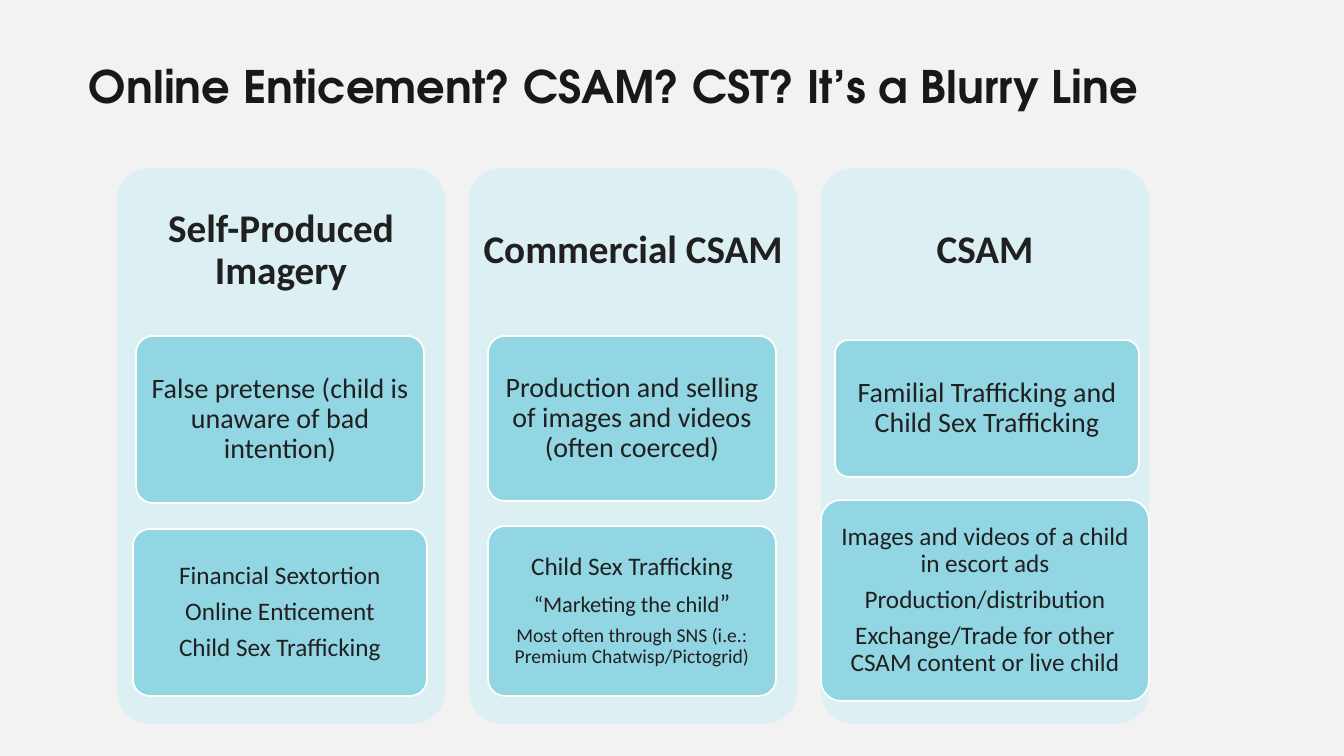
"""Build the slide on three blurry lines: title, columns and cards."""
from pptx import Presentation
from pptx.dml.color import RGBColor
from pptx.enum.shapes import MSO_SHAPE
from pptx.enum.text import MSO_ANCHOR, PP_ALIGN
from pptx.util import Inches, Pt

PX = Inches(1) / 100.8
THEME = {
    "back": RGBColor.from_string("F2F2F2"),
    "pale": RGBColor.from_string("DCF0F4"),
    "card": RGBColor.from_string("92D6E3"),
    "edge": RGBColor.from_string("FFFFFF"),
    "title": RGBColor.from_string("181818"),
    "ink": RGBColor.from_string("202020"),
    "head": "TeX Gyre Adventor", "body": "Calibri",
    "top": 32, "big": 28, "mid": 20, "low": 18, "small": 16, "tiny": 14,
}


def write(shape, paras, inset, font="body", ink="ink", bold=False, centre=True):
    frame = shape.text_frame
    frame.word_wrap = True
    frame.vertical_anchor = MSO_ANCHOR.MIDDLE if centre else MSO_ANCHOR.BOTTOM
    frame.margin_left = frame.margin_right = round(inset[0] * PX)
    frame.margin_top = frame.margin_bottom = round(inset[1] * PX)
    for i, runs in enumerate(paras):
        para = frame.add_paragraph() if i else frame.paragraphs[0]
        para.alignment = PP_ALIGN.CENTER if centre else PP_ALIGN.LEFT
        if centre:
            para.line_spacing = 0.9
            para.space_after = Pt(round(0.35 * THEME[runs[0][1]], 1))
        for text, size in runs:
            run = para.add_run()
            run.text = text
            run.font.name = THEME[font]
            run.font.size = Pt(THEME[size])
            run.font.bold = bold
            run.font.color.rgb = THEME[ink]


def panel(box, fill):
    shape = slide.shapes.add_shape(
        MSO_SHAPE.ROUNDED_RECTANGLE, *[round(n * PX) for n in box])
    shape.adjustments[0] = 0.1
    shape.shadow.inherit = False
    shape.fill.solid()
    shape.fill.fore_color.rgb = THEME[fill]
    shape.line.fill.background()
    return shape


deck = Presentation()
deck.slide_width = round(1344 * PX)
deck.slide_height = round(756 * PX)
slide = deck.slides.add_slide(deck.slide_layouts[6])
slide.background.fill.solid()
slide.background.fill.fore_color.rgb = THEME["back"]

title = slide.shapes.add_textbox(*[round(n * PX) for n in (89, 31, 1108, 86)])
write(title, [[("Online Enticement? CSAM? CST? It’s a Blurry Line", "top")]],
      (0, 5), "head", "title", True, False)

COLUMNS = [
    ("Self-Produced Imagery", [
        ((136, 336, 288, 167),
         [[("False pretense (child is unaware of bad intention)", "mid")]]),
        ((133, 529, 294, 167),
         [[("Financial Sextortion", "low")],
          [("Online Enticement", "low")],
          [("Child Sex Trafficking", "low")]]),
    ]),
    ("Commercial CSAM", [
        ((488, 336, 288, 165),
         [[("Production and selling of images and videos (often coerced)", "mid")]]),
        ((488, 526, 288, 170),
         [[("Child Sex Trafficking", "low")],
          [("“Marketing the child", "small"), ("”", "low")],
          [("Most often through SNS (i.e.: Premium Chatwisp/Pictogrid)", "tiny")]]),
    ]),
    ("CSAM", [
        ((835, 340, 304, 137),
         [[("Familial Trafficking and Child Sex Trafficking", "mid")]]),
        ((821, 500, 328, 201),
         [[("Images and videos of a child in escort ads", "low")],
          [("Production/distribution", "low")],
          [("Exchange/Trade for other CSAM content or live child", "low")]]),
    ]),
]

for i, (name, cards) in enumerate(COLUMNS):
    left = 117 + 352 * i
    panel((left, 168, 328, 556), "pale")
    head = slide.shapes.add_textbox(
        *[round(n * PX) for n in (left, 168, 328, 166)])
    write(head, [[(name, "big")]], (12, 12), bold=True)
    for box, paras in cards:
        card = panel(box, "card")
        card.line.color.rgb = THEME["edge"]
        card.line.width = Pt(1.25)
        write(card, paras, (5, 4))

deck.save("out.pptx")
